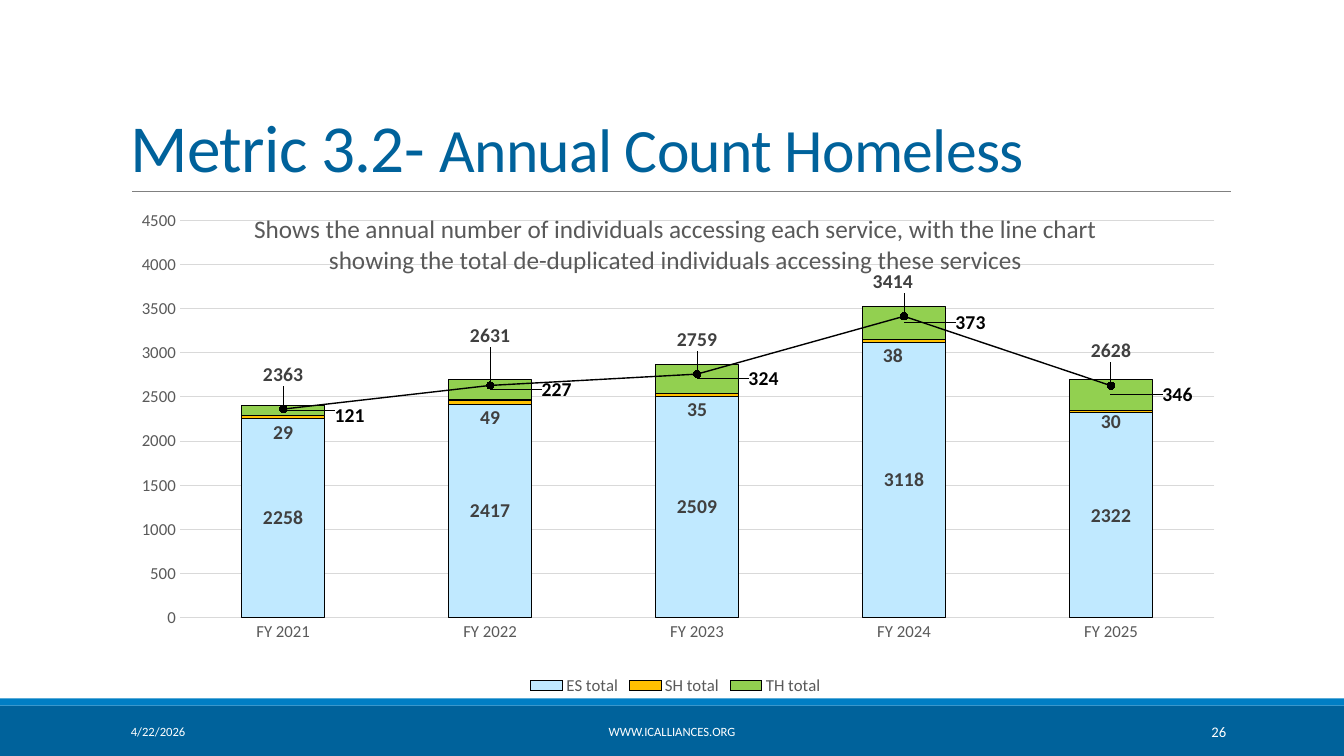
from lxml import etree
from pptx import Presentation
from pptx.chart.data import CategoryChartData
from pptx.dml.color import RGBColor
from pptx.enum.chart import (XL_CHART_TYPE, XL_LABEL_POSITION, XL_LEGEND_POSITION,
                             XL_MARKER_STYLE, XL_TICK_MARK)
from pptx.enum.shapes import MSO_CONNECTOR, MSO_SHAPE
from pptx.enum.text import MSO_ANCHOR, PP_ALIGN
from pptx.oxml import parse_xml
from pptx.oxml.ns import nsdecls, qn
from pptx.util import Inches, Pt

STACKED = XL_CHART_TYPE.COLUMN_STACKED
ABOVE = XL_LABEL_POSITION.ABOVE
BOTTOM = XL_LEGEND_POSITION.BOTTOM
CIRCLE = XL_MARKER_STYLE.CIRCLE
NO_TICK = XL_TICK_MARK.NONE
LEFT, CENTER, RIGHT = PP_ALIGN.LEFT, PP_ALIGN.CENTER, PP_ALIGN.RIGHT

FONT = "Calibri"
COLORS = {
    "navy": "00629B", "blue": "007EC4", "rule": "808080", "grid": "D9D9D9",
    "text": "595959", "label": "404040", "black": "000000", "white": "FFFFFF",
    "es": "C0E9FF", "sh": "FFC000", "th": "92D050",
}
YEARS = [f"FY {year}" for year in range(2021, 2026)]
# name, values, fill, label colour, label shifts as fractions of the chart
SERIES = [
    ("ES total", (2258, 2417, 2509, 3118, 2322), "es", "label", ()),
    ("SH total", (29, 49, 35, 38, 30), "sh", "label",
     ((0, 0.03), (0, 0.03), (0, 0.03), (-0.01, 0.03), (0, 0.02))),
    ("TH total", (121, 227, 324, 373, 346), "th", "black",
     ((0.06, 0.01), (0.06, 0), (0.06, 0), (0.06, 0), (0.06, 0))),
    ("Series 4", (2363, 2631, 2759, 3414, 2628), "black", "label",
     ((0, -0.03), (0, -0.06), (0, -0.03), (-0.01, -0.03), (0, -0.03))),
]
CHART_TITLE = ("Shows the annual number of individuals accessing each service, with the "
               "line chart showing the total de-duplicated individuals accessing these services")


def rgb(name):
    return RGBColor.from_string(COLORS[name])


def set_font(font, size, color, bold=False):
    font.name, font.size, font.bold = FONT, Pt(size), bold
    font.color.rgb = rgb(color)


def set_line(line, color, width):
    line.color.rgb = rgb(color)
    line.width = Pt(width)


def add_band(s, top, height, color):
    sp = s.shapes.add_shape(MSO_SHAPE.RECTANGLE, 0, Inches(top), Inches(13.33), Inches(height))
    sp.shadow.inherit = False
    sp.fill.solid()
    sp.fill.fore_color.rgb = rgb(color)
    sp.line.fill.background()


def add_rule(s, left, right, y):
    line = s.shapes.add_connector(MSO_CONNECTOR.STRAIGHT, Inches(left), Inches(y),
                                  Inches(right), Inches(y))
    set_line(line.line, "rule", 0.5)
    etree.SubElement(line._element.spPr, qn("a:effectLst"))


def add_box(s, left, top, width, height, anchor):
    tf = s.shapes.add_textbox(Inches(left), Inches(top), Inches(width),
                              Inches(height)).text_frame
    tf.word_wrap = True
    tf.vertical_anchor = anchor
    return tf.paragraphs[0]


def add_title(s):
    p = add_box(s, 1.2, 0.31, 11, 1.59, MSO_ANCHOR.BOTTOM)
    p.line_spacing = 0.85
    for text, size in (("Metric 3.2- ", 48), ("Annual Count Homeless", 44)):
        r = p.add_run()
        r.text = text
        set_font(r.font, size, "navy")
        r.font._element.set("spc", "-50")


def add_footer(s, left, width, text, size, align):
    p = add_box(s, left, 7.06, width, 0.4, MSO_ANCHOR.MIDDLE)
    p.text, p.alignment = text, align
    set_font(p.font, size, "white")


def make_layout(x, y, w=None, h=None):
    parts = ""
    if w:
        parts = '<c:layoutTarget val="inner"/><c:xMode val="edge"/><c:yMode val="edge"/>'
    parts += f'<c:x val="{x}"/><c:y val="{y}"/>'
    if w:
        parts += f'<c:w val="{w}"/><c:h val="{h}"/>'
    return parse_xml(f'<c:layout {nsdecls("c")}><c:manualLayout>{parts}'
                     '</c:manualLayout></c:layout>')


def move_last_series_to_line(chart):
    """Turn the last column series into a line on the same axes."""
    bar = chart._chartSpace.find(".//" + qn("c:barChart"))
    ser = bar.findall(qn("c:ser"))[-1]
    for invert in ser.findall(qn("c:invertIfNegative")):
        ser.remove(invert)
    axes = "".join(f'<c:axId val="{ax.get("val")}"/>' for ax in bar.findall(qn("c:axId")))
    line = parse_xml(f'<c:lineChart {nsdecls("c")}><c:grouping val="standard"/>'
                     f'<c:varyColors val="0"/><c:marker val="1"/>{axes}</c:lineChart>')
    line.insert(2, ser)
    bar.addnext(line)


def style_axis(axis):
    axis.major_tick_mark = axis.minor_tick_mark = NO_TICK
    set_font(axis.tick_labels.font, 12, "text")


def add_labels(ser, color, shifts, position=None):
    labels = ser.data_labels
    labels.show_value = True
    set_font(labels.font, 14, color, True)
    for i, (dx, dy) in enumerate(shifts):
        label = ser.points[i].data_label
        set_font(label.font, 14, color, True)
        if position is not None:
            label.position = position
        index = labels._element.findall(qn("c:dLbl"))[i].find(qn("c:idx"))
        index.addnext(make_layout(dx, dy))


def add_count_chart(s):
    data = CategoryChartData()
    data.categories = YEARS
    for name, values, *_ in SERIES:
        data.add_series(name, values)
    chart = s.shapes.add_chart(STACKED, Inches(1.2), Inches(1.9), Inches(11),
                               Inches(5.04), data).chart
    set_font(chart.font, 10, "black")
    move_last_series_to_line(chart)
    bars, line = chart.plots
    bars.gap_width, bars.overlap, bars.vary_by_categories = 150, 100, False

    # Columns
    for ser, (_, _, fill, color, shifts) in zip(bars.series, SERIES):
        ser.invert_if_negative = False
        ser.format.fill.solid()
        ser.format.fill.fore_color.rgb = rgb(fill)
        set_line(ser.format.line, "black", 0.75)
        add_labels(ser, color, shifts)

    # Line of de-duplicated totals
    total = line.series[0]
    total.smooth = False
    set_line(total.format.line, "black", 1)
    total.marker.style, total.marker.size = CIRCLE, 5
    total.marker.format.fill.solid()
    total.marker.format.fill.fore_color.rgb = rgb("black")
    set_line(total.marker.format.line, "black", 0.75)
    add_labels(total, *SERIES[-1][3:], ABOVE)

    # Axes
    style_axis(chart.category_axis)
    set_line(chart.category_axis.format.line, "grid", 0.75)
    counts = chart.value_axis
    style_axis(counts)
    counts.minimum_scale, counts.maximum_scale, counts.major_unit = 0, 4500, 500
    counts.format.line.fill.background()
    set_line(counts.major_gridlines.format.line, "grid", 0.75)

    # Title over the plot
    p = chart.chart_title.text_frame.paragraphs[0]
    p.text = CHART_TITLE
    set_font(p.font, 18, "text")
    chart._chartSpace.find(".//" + qn("c:title")).find(qn("c:overlay")).set("val", "1")

    # Legend without the line
    chart.has_legend = True
    chart.legend.position = BOTTOM
    chart.legend.include_in_layout = False
    set_font(chart.legend.font, 12, "text")
    entry = parse_xml(f'<c:legendEntry {nsdecls("c")}><c:idx val="3"/>'
                      '<c:delete val="1"/></c:legendEntry>')
    chart.legend._element.find(qn("c:legendPos")).addnext(entry)

    # Plot area
    area = chart._chartSpace.find(".//" + qn("c:plotArea"))
    for old in area.findall(qn("c:layout")):
        area.remove(old)
    area.insert(0, make_layout(0.053, 0.057, 0.933, 0.782))


def main():
    prs = Presentation()
    prs.slide_width, prs.slide_height = Inches(13.33), Inches(7.5)
    s = prs.slides.add_slide(prs.slide_layouts[6])
    add_band(s, 7, 0.5, "navy")
    add_band(s, 6.93, 0.07, "blue")
    add_rule(s, 1.31, 12.21, 1.9)
    add_title(s)
    add_count_chart(s)
    add_footer(s, 1.2, 2.7, "4/22/2026", 9, LEFT)
    add_footer(s, 4.03, 5.27, "WWW.ICALLIANCES.ORG", 9, CENTER)
    add_footer(s, 10.83, 1.43, "26", 10.5, RIGHT)
    prs.save("out.pptx")


if __name__ == "__main__":
    main()
